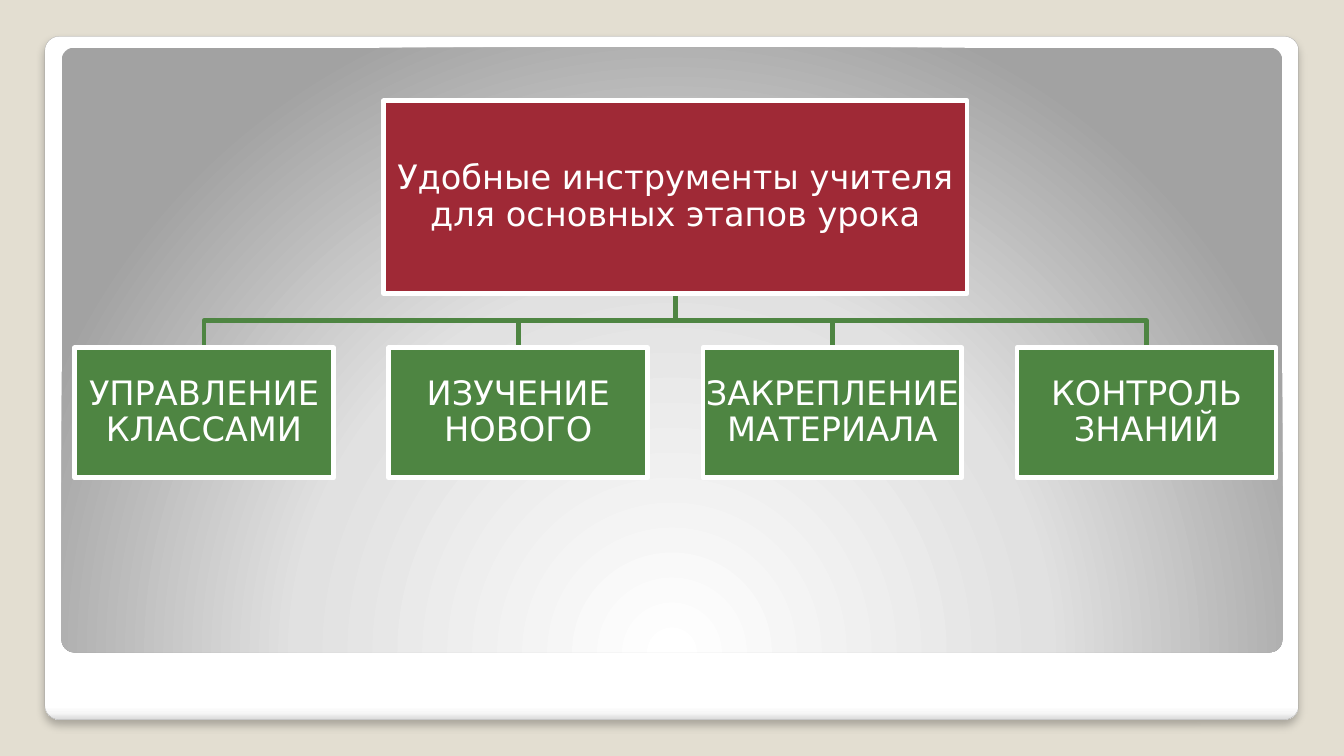
from dataclasses import dataclass

from lxml.etree import SubElement
from pptx import Presentation
from pptx.dml.color import RGBColor
from pptx.enum.shapes import MSO_SHAPE
from pptx.enum.text import MSO_ANCHOR, PP_ALIGN
from pptx.oxml import parse_xml
from pptx.oxml.ns import nsdecls, qn
from pptx.util import Pt


@dataclass(frozen=True)
class Theme:
    background: str = "E3DED1"
    frame_line: str = "A4A4A4"
    shadow: str = "000000"
    root: str = "9F2936"
    branch: str = "4E8542"
    light: str = "FFFFFF"
    font: str = "DejaVu Sans"
    text_size: float = 24
    line_width: float = 3.35
    frame_stops: tuple = ((0, "FFFFFF"), (98, "FFFFFF"), (99, "F7F7F7"), (100, "DADADA"))
    panel_stops: tuple = ((0, "FFFFFF"), (55, "E1E1E1"), (100, "A2A2A2"))


THEME = Theme()
LINEAR_DOWN = '<a:lin ang="5400000" scaled="0"/>'
CIRCLE_FROM_BELOW = (
    '<a:path path="circle">'
    '<a:fillToRect l="50000" t="175000" r="50000" b="-75000"/></a:path>'
)

ROOT_TEXT = "Удобные инструменты учителя для основных этапов урока"
STAGES = ("УПРАВЛЕНИЕ КЛАССАМИ", "ИЗУЧЕНИЕ НОВОГО", "ЗАКРЕПЛЕНИЕ МАТЕРИАЛА", "КОНТРОЛЬ ЗНАНИЙ")
CENTER = 482.4
ROOT_TOP, ROOT_WIDTH, ROOT_HEIGHT = 72, 416.9, 137.5
STAGE_TOP, STAGE_WIDTH, STAGE_HEIGHT, STAGE_PITCH = 248.4, 185, 92.9, 224.4


def color(value):
    return RGBColor.from_string(value)


def set_line(shape, value, width):
    shape.line.color.rgb = color(value)
    shape.line.width = Pt(width)


def set_gradient(shape, stops, direction):
    """Fill with (percent, colour) stops along a DrawingML direction element."""
    shape.fill.background()
    properties = shape.element.spPr
    stop_list = "".join(
        f'<a:gs pos="{percent * 1000}"><a:srgbClr val="{value}"/></a:gs>'
        for percent, value in stops
    )
    gradient = parse_xml(
        f'<a:gradFill {nsdecls("a")} rotWithShape="1">'
        f"<a:gsLst>{stop_list}</a:gsLst>{direction}</a:gradFill>"
    )
    properties.replace(properties.find(qn("a:noFill")), gradient)


def add_panel(slide, left, top, width, height, stops, direction):
    panel = slide.shapes.add_shape(
        MSO_SHAPE.ROUNDED_RECTANGLE, Pt(left), Pt(top), Pt(width), Pt(height)
    )
    panel.adjustments[0] = 0.021
    panel.shadow.inherit = False
    panel.line.fill.background()
    set_gradient(panel, stops, direction)
    return panel


def add_soft_shadow(shape):
    effects = shape.element.spPr.find(qn("a:effectLst"))
    shadow = SubElement(
        effects, qn("a:outerShdw"),
        blurRad=str(Pt(6)), dist=str(Pt(4)), dir="5400000", algn="t", rotWithShape="0",
    )
    tint = SubElement(shadow, qn("a:srgbClr"), val=THEME.shadow)
    SubElement(tint, qn("a:alpha"), val="25000")


def add_branch(slide, stage_center):
    """Draw the bent line from the root box down to one stage box."""
    root_bottom = ROOT_TOP + ROOT_HEIGHT
    bend = (root_bottom + STAGE_TOP) / 2
    builder = slide.shapes.build_freeform(Pt(CENTER), Pt(root_bottom))
    corners = ((CENTER, bend), (stage_center, bend), (stage_center, STAGE_TOP))
    builder.add_line_segments([(Pt(x), Pt(y)) for x, y in corners], close=False)
    branch = builder.convert_to_shape()
    branch.shadow.inherit = False
    branch.fill.background()
    set_line(branch, THEME.branch, THEME.line_width)


def add_box(slide, center, top, width, height, text, fill):
    box = slide.shapes.add_shape(
        MSO_SHAPE.RECTANGLE, Pt(center - width / 2), Pt(top), Pt(width), Pt(height)
    )
    box.shadow.inherit = False
    box.fill.solid()
    box.fill.fore_color.rgb = color(fill)
    set_line(box, THEME.light, THEME.line_width)
    frame = box.text_frame
    frame.word_wrap = True
    frame.vertical_anchor = MSO_ANCHOR.MIDDLE
    frame.margin_left = frame.margin_right = Pt(1.2)
    frame.margin_top = frame.margin_bottom = Pt(1.2)
    para = frame.paragraphs[0]
    para.text = text
    para.alignment = PP_ALIGN.CENTER
    para.line_spacing = 0.9
    para.font.name = THEME.font
    para.font.size = Pt(THEME.text_size)
    para.font.color.rgb = color(THEME.light)


def main():
    deck = Presentation()
    deck.slide_width, deck.slide_height = Pt(960), Pt(540)
    slide = deck.slides.add_slide(deck.slide_layouts[6])
    slide.background.fill.solid()
    slide.background.fill.fore_color.rgb = color(THEME.background)

    frame = add_panel(slide, 32, 26, 895.7, 488, THEME.frame_stops, LINEAR_DOWN)
    set_line(frame, THEME.frame_line, 0.16)
    add_soft_shadow(frame)
    add_panel(slide, 44, 34, 872, 432, THEME.panel_stops, CIRCLE_FROM_BELOW)

    middle = (len(STAGES) - 1) / 2
    centers = [CENTER + (index - middle) * STAGE_PITCH for index in range(len(STAGES))]
    for center in centers:
        add_branch(slide, center)
    add_box(slide, CENTER, ROOT_TOP, ROOT_WIDTH, ROOT_HEIGHT, ROOT_TEXT, THEME.root)
    for center, stage in zip(centers, STAGES):
        add_box(slide, center, STAGE_TOP, STAGE_WIDTH, STAGE_HEIGHT, stage, THEME.branch)

    deck.save("out.pptx")


if __name__ == "__main__":
    main()
